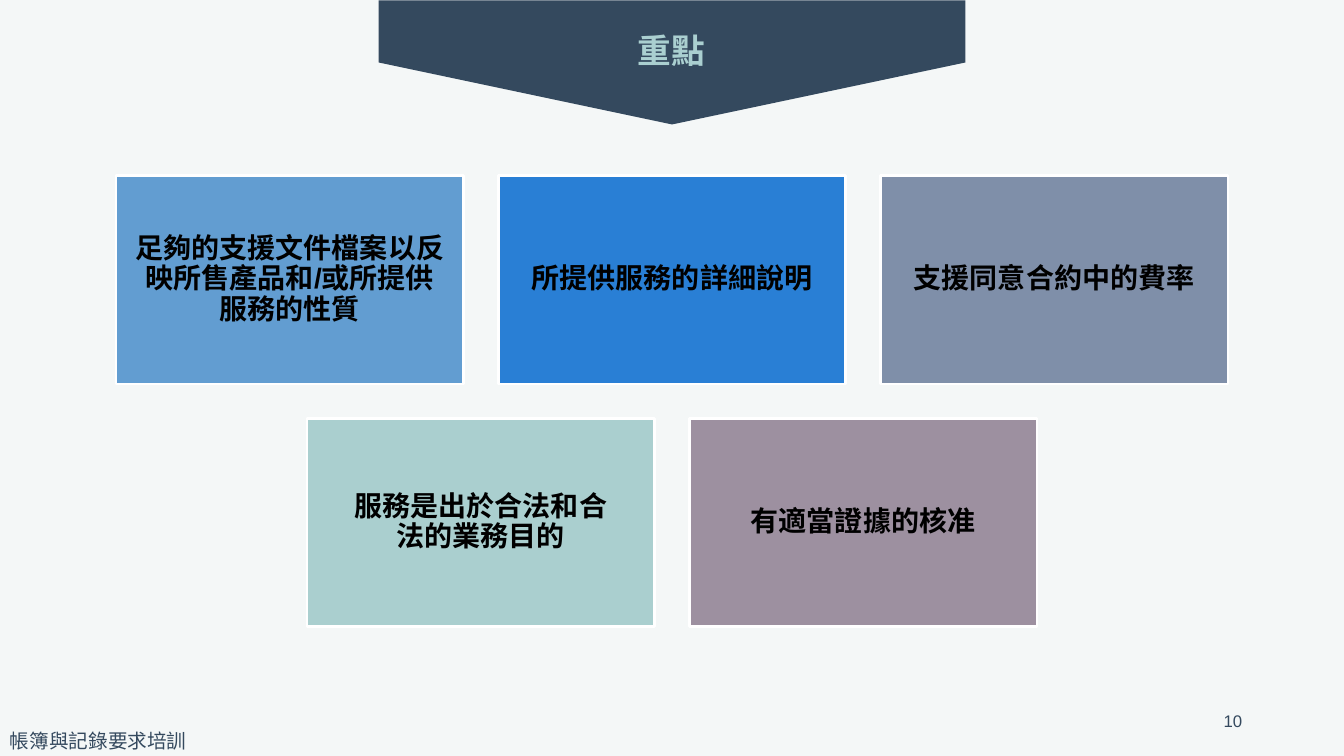
from lxml import etree
from pptx import Presentation
from pptx.dml.color import RGBColor
from pptx.enum import shapes, text
from pptx.oxml.ns import qn
from pptx.util import Inches, Pt

HUES = {
    "back": "F4F7F7", "navy": "34495E", "mint": "AACFD0",
    "black": "000000", "white": "FFFFFF", "sky": "629DD1",
    "blue": "297FD5", "slate": "7F8FA9", "teal": "AACFCF",
    "mauve": "9D90A0",
}
ROWS = [
    [("足夠的支援文件檔案以反映所售產品和/或所提供\n服務的性質", "sky"),
     ("所提供服務的詳細說明", "blue"),
     ("支援同意合約中的費率", "slate")],
    [("服務是出於合法和合\n法的業務目的", "teal"),
     ("有適當證據的核准", "mauve")],
]
WIDE, HIGH = 13.33, 7.5
CARD_W, CARD_H = 3.45, 2.07
GAP, TOP = 0.34, 1.74


class Deck:
    latin = "Arial"
    asian = "Noto Sans CJK TC"

    def __init__(self):
        self.prs = Presentation()
        self.prs.slide_width = Inches(WIDE)
        self.prs.slide_height = Inches(HIGH)
        self.slide = self.prs.slides.add_slide(self.prs.slide_layouts[5])
        fill = self.slide.background.fill
        fill.solid()
        fill.fore_color.rgb = self.hue("back")

    def hue(self, name):
        return RGBColor.from_string(HUES[name])

    def words(self, shape, lines, size, color, align="LEFT", anchor="TOP",
              bold=False, inset=(0.1, 0.05), font=None):
        frame = shape.text_frame
        frame.word_wrap = True
        frame.auto_size = text.MSO_AUTO_SIZE.NONE
        frame.vertical_anchor = text.MSO_ANCHOR[anchor]
        frame.margin_left = frame.margin_right = Inches(inset[0])
        frame.margin_top = frame.margin_bottom = Inches(inset[1])
        para = frame.paragraphs[0]
        para.alignment = text.PP_ALIGN[align]
        for row, line in enumerate(lines.split("\n")):
            if row:
                para.add_line_break()
            run = para.add_run()
            run.text = line
            run.font.size = Pt(size)
            run.font.bold = bold
            run.font.color.rgb = self.hue(color)
            run.font.name = font or self.latin
            east = etree.SubElement(run._r.get_or_add_rPr(), qn("a:ea"))
            east.set("typeface", self.asian)
        return para

    def shape(self, kind, box, color):
        item = self.slide.shapes.add_shape(kind, *map(Inches, box))
        item.shadow.inherit = False
        item.fill.solid()
        item.fill.fore_color.rgb = self.hue(color)
        item.line.fill.background()
        return item

    def banner(self):
        item = self.shape(shapes.MSO_SHAPE.PENTAGON,
                          (6.05, -2.29, 1.23, 5.82), "navy")
        item.rotation = 90
        item.adjustments[0] = 0.5

    def title(self, lines, box):
        item = self.slide.shapes.title
        item.left, item.top, item.width, item.height = map(Inches, box)
        self.slide.shapes._spTree.append(item._element)
        self.words(item, lines, 24, "mint", "CENTER", bold=True)

    def label(self, lines, box, size, **style):
        item = self.slide.shapes.add_textbox(*map(Inches, box))
        self.words(item, lines, size, "navy", **style)

    def card(self, lines, left, top, color):
        item = self.shape(shapes.MSO_SHAPE.RECTANGLE,
                          (left, top, CARD_W, CARD_H), color)
        item.line.color.rgb = self.hue("white")
        item.line.width = Pt(2)
        para = self.words(item, lines, 20, "black", "CENTER", "MIDDLE",
                          bold=True, inset=(0.08, 0.08))
        para.line_spacing = 0.9

    def cards(self, rows):
        for down, row in enumerate(rows):
            span = len(row) * (CARD_W + GAP) - GAP
            left = (WIDE - span) / 2
            for over, (lines, color) in enumerate(row):
                self.card(lines, left + over * (CARD_W + GAP),
                          TOP + down * (CARD_H + GAP), color)


def main():
    deck = Deck()
    deck.label("帳簿與記錄要求培訓", (0, 7.18, 4.17, 0.34), 14,
               font=deck.asian)
    deck.banner()
    deck.title("重點", (2.97, 0.25, 7.38, 0.5))
    deck.label("10", (9.42, 6.95, 3, 0.4), 12, align="RIGHT",
               anchor="MIDDLE")
    deck.cards(ROWS)
    deck.prs.save("out.pptx")


if __name__ == "__main__":
    main()
